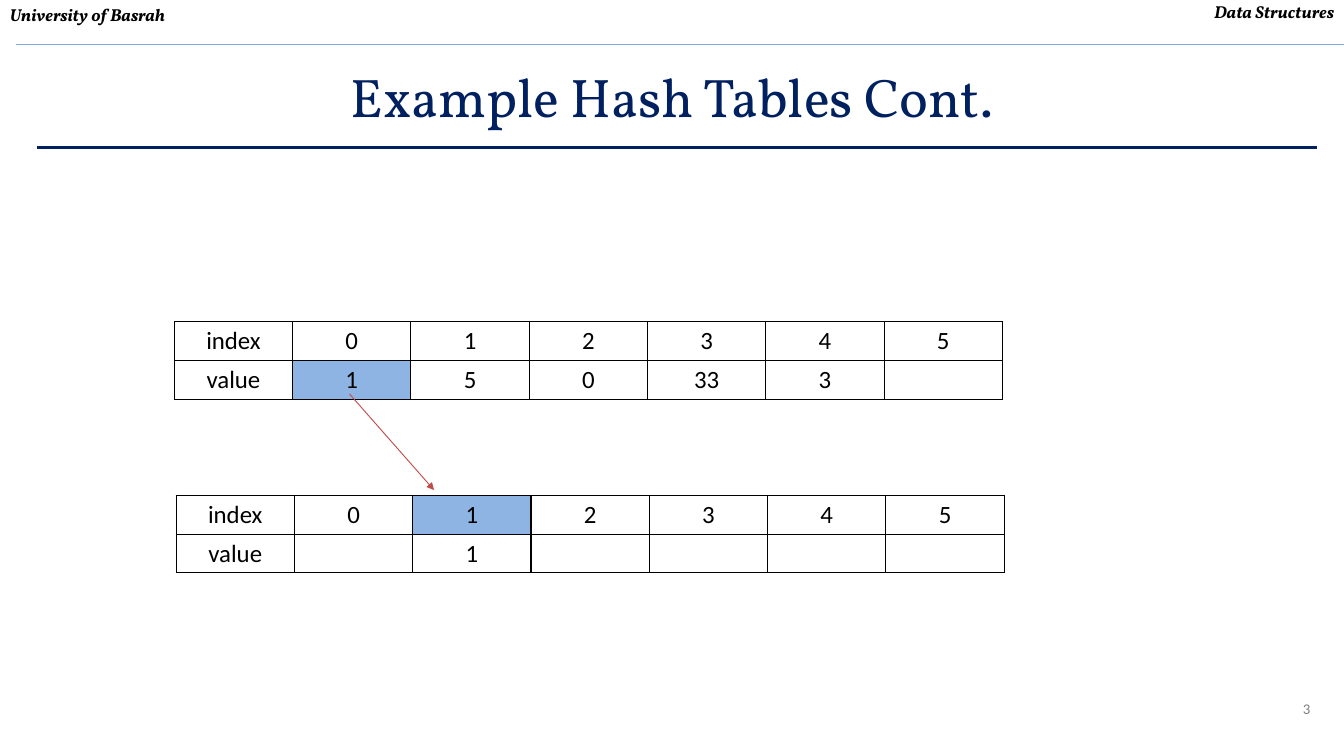
from lxml import etree
from pptx import Presentation
from pptx.dml.color import RGBColor
from pptx.enum.shapes import MSO_CONNECTOR
from pptx.enum.text import MSO_ANCHOR, PP_ALIGN
from pptx.oxml.ns import qn
from pptx.util import Inches, Pt

LEFT, CENTER, RIGHT = PP_ALIGN.LEFT, PP_ALIGN.CENTER, PP_ALIGN.RIGHT
TOP, MIDDLE = MSO_ANCHOR.TOP, MSO_ANCHOR.MIDDLE
STRAIGHT = MSO_CONNECTOR.STRAIGHT

BLACK = RGBColor(0x00, 0x00, 0x00)
GRAY = RGBColor(0x80, 0x80, 0x80)
NAVY = RGBColor(0x00, 0x20, 0x60)
PALE_BLUE = RGBColor(0x8A, 0xA6, 0xDC)
HIGHLIGHT = RGBColor(0x8E, 0xB4, 0xE3)
RED = RGBColor(0xBF, 0x4C, 0x48)

HEADER = {"name": "Vollkorn", "size": Pt(14), "bold": True, "italic": True, "color": BLACK}
TITLE = {"name": "Vollkorn", "size": Pt(44), "color": NAVY}
CELL = {"name": "Calibri", "size": Pt(20.1), "color": BLACK}
PAGE_NUMBER = {"name": "Calibri", "size": Pt(12), "color": GRAY}

COLUMN_WIDTH = 1.33
ROW_HEIGHT = 0.41
INDEX_ROW = ["index", "0", "1", "2", "3", "4", "5"]


class SlideBuilder:
    def __init__(self, slide):
        self.slide = slide

    def add_styled_run(self, paragraph, text, style, alignment):
        paragraph.alignment = alignment
        run = paragraph.add_run()
        run.text = text
        for name, value in style.items():
            if name == "color":
                run.font.color.rgb = value
            else:
                setattr(run.font, name, value)

    def text(self, box, text, style, alignment=LEFT, anchor=TOP):
        shape = self.slide.shapes.add_textbox(*map(Inches, box))
        frame = shape.text_frame
        frame.word_wrap = True
        frame.vertical_anchor = anchor
        self.add_styled_run(frame.paragraphs[0], text, style, alignment)

    def line(self, start, end, color, width, arrow=False):
        points = map(Inches, (*start, *end))
        connector = self.slide.shapes.add_connector(STRAIGHT, *points)
        connector.line.color.rgb = color
        connector.line.width = Pt(width)
        if arrow:
            outline = connector.line._get_or_add_ln()
            etree.SubElement(outline, qn("a:tailEnd"), type="triangle")
        etree.SubElement(connector._element.spPr, qn("a:effectLst"))

    def border(self, cell):
        """Draw a thin black line on all four sides of the cell."""
        properties = cell._tc.get_or_add_tcPr()
        for position, side in enumerate(("lnL", "lnR", "lnT", "lnB")):
            edge = etree.Element(qn(f"a:{side}"), w=str(Pt(1)))
            fill = etree.SubElement(edge, qn("a:solidFill"))
            etree.SubElement(fill, qn("a:srgbClr"), val=str(BLACK))
            properties.insert(position, edge)

    def table(self, left, top, rows, highlighted):
        """Add a bordered table; highlighted is the (row, column) of the blue cell."""
        size = (COLUMN_WIDTH * len(rows[0]), ROW_HEIGHT * len(rows))
        frame = self.slide.shapes.add_table(
            len(rows), len(rows[0]), *map(Inches, (left, top, *size)))
        table = frame.table
        table.first_row = table.horz_banding = False
        for column in table.columns:
            column.width = Inches(COLUMN_WIDTH)
        for row_number, row in enumerate(rows):
            table.rows[row_number].height = Inches(ROW_HEIGHT)
            for column_number, text in enumerate(row):
                cell = table.cell(row_number, column_number)
                if (row_number, column_number) == highlighted:
                    cell.fill.solid()
                    cell.fill.fore_color.rgb = HIGHLIGHT
                else:
                    cell.fill.background()
                self.border(cell)
                if text:
                    self.add_styled_run(cell.text_frame.paragraphs[0], text, CELL, CENTER)


def main():
    presentation = Presentation()
    presentation.slide_width = Inches(15.11)
    presentation.slide_height = Inches(8.5)
    builder = SlideBuilder(presentation.slides.add_slide(presentation.slide_layouts[6]))

    builder.text((13.16, 7.82, 1.67, 0.7), "3", PAGE_NUMBER, RIGHT)
    builder.text((0, -0.03, 15.1, 0.34), "Data Structures", HEADER, RIGHT)
    builder.text((0.01, 0, 7.85, 0.34), "University of Basrah", HEADER)
    builder.line((0.18, 0.5), (15.11, 0.5), PALE_BLUE, 1.5)
    builder.line((0.42, 1.66), (14.81, 1.66), NAVY, 2)
    builder.text((0, 0.5, 15.11, 1.15), "Example Hash Tables Cont.", TITLE, CENTER, MIDDLE)

    input_values = ["value", "1", "5", "0", "33", "3", ""]
    hashed_values = ["value", "", "1", "", "", "", ""]
    builder.table(1.96, 3.62, [INDEX_ROW, input_values], (1, 1))
    builder.table(1.98, 5.57, [INDEX_ROW, hashed_values], (0, 2))
    builder.line((3.93, 4.43), (4.88, 5.51), RED, 0.75, arrow=True)

    presentation.save("out.pptx")


if __name__ == "__main__":
    main()
